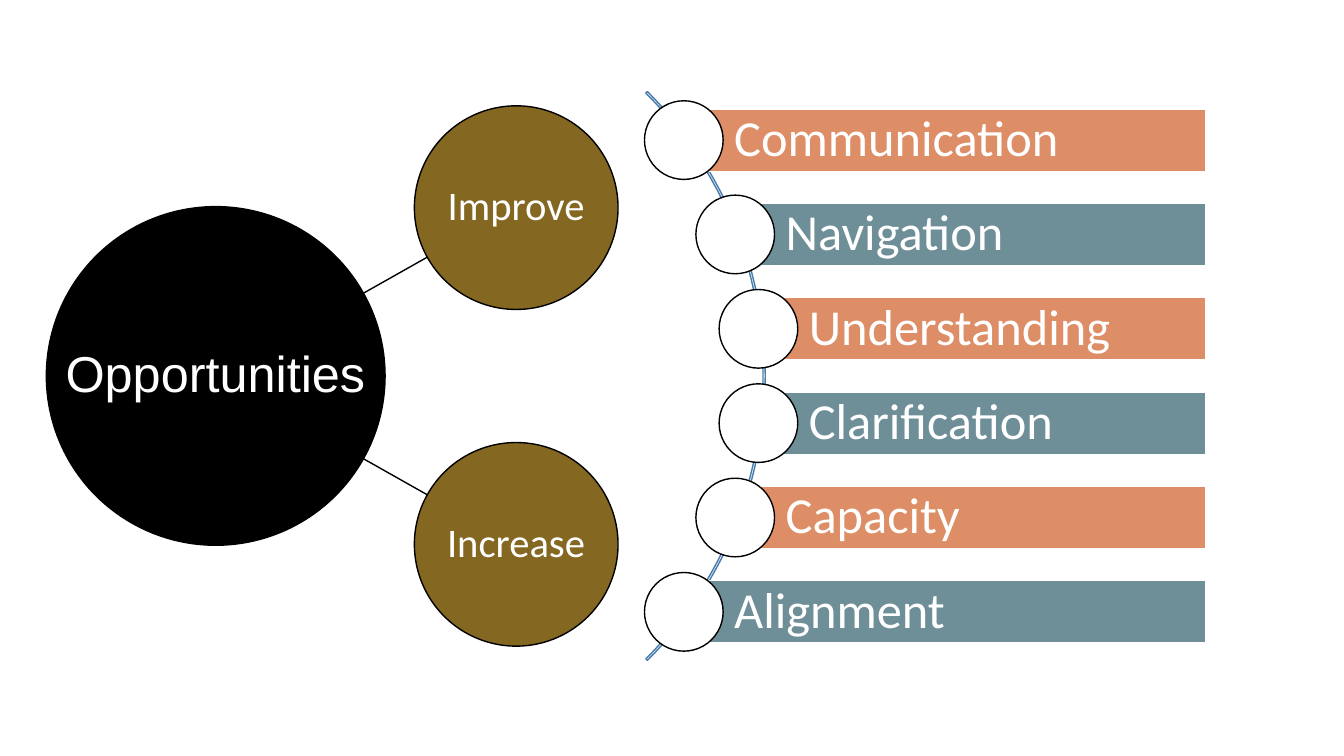
from math import sqrt

from lxml.etree import SubElement
from pptx import Presentation
from pptx.dml.color import RGBColor
from pptx.enum.shapes import MSO_CONNECTOR, MSO_SHAPE
from pptx.enum.text import MSO_ANCHOR, MSO_AUTO_SIZE, PP_ALIGN
from pptx.oxml.ns import qn
from pptx.util import Inches, Pt

BLACK, WHITE = "000000", "FFFFFF"
GOLD, CORAL, TEAL, BLUE = "846721", "DE8E67", "6E8E98", "497CAB"

GOALS = ["Communication", "Navigation", "Understanding",
         "Clarification", "Capacity", "Alignment"]
MID = 3.73        # height of the centre line
ARC_X = 3.6       # centre of the arc
PITCH = 0.936     # distance between goal rows


def color(code):
    return RGBColor.from_string(code)


def write(shape, text, size, font="Calibri", align=PP_ALIGN.LEFT,
          left=0.1, pad=0.1, tint=WHITE):
    frame = shape.text_frame
    frame.word_wrap = True
    frame.auto_size = MSO_AUTO_SIZE.NONE
    frame.vertical_anchor = MSO_ANCHOR.MIDDLE
    frame.margin_left = Inches(left)
    frame.margin_top = frame.margin_right = frame.margin_bottom = Inches(pad)
    para = frame.paragraphs[0]
    para.alignment = align
    para.line_spacing = 0.9
    para.space_before = Pt(0)
    run = para.add_run()
    run.text = text
    run.font.size = Pt(size)
    run.font.name = font
    run.font.color.rgb = color(tint)


def draw(slide, kind, x, y, w, h, fill, line):
    shape = slide.shapes.add_shape(kind, Inches(x), Inches(y),
                                   Inches(w), Inches(h))
    shape.shadow.inherit = False
    if fill:
        shape.fill.solid()
        shape.fill.fore_color.rgb = color(fill)
    else:
        shape.fill.background()
    shape.line.color.rgb = color(line)
    shape.line.width = Pt(1)
    return shape


def disc(slide, x, y, size, fill):
    """Circle centred on x, y."""
    return draw(slide, MSO_SHAPE.OVAL, x - size / 2, y - size / 2,
                size, size, fill, BLACK)


def spoke(slide, x1, y1, x2, y2):
    line = slide.shapes.add_connector(
        MSO_CONNECTOR.STRAIGHT, Inches(x1), Inches(y1), Inches(x2), Inches(y2))
    line.line.color.rgb = color(BLACK)
    line.line.width = Pt(1)
    SubElement(line._element.spPr, qn("a:effectLst"))


def hub(slide, body):
    # Spokes lie behind the circles
    for side in (-1, 1):
        spoke(slide, 3.32, MID + side * 0.66, 4.24, MID + side * 1.18)
    disc(slide, 2.14, MID, 3.36, BLACK)
    for side, word in ((-1, "Improve"), (1, "Increase")):
        ball = disc(slide, 5.12, MID + side * 1.67, 2.02, GOLD)
        write(ball, word, 29, align=PP_ALIGN.CENTER, left=0.02, pad=0.02)

    # Bring the main label in front of its circle
    body.left, body.top = Inches(0.55), Inches(3.31)
    body.width, body.height = Inches(3.21), Inches(0.85)
    write(body, "Opportunities", 36, font="Arial", pad=0.05)
    body._element.getparent().append(body._element)


def goals(slide):
    # Thin arc that carries the rings
    size = 7.98
    arc = draw(slide, MSO_SHAPE.BLOCK_ARC, ARC_X - size / 2, MID - size / 2,
               size, size, None, BLUE)
    for i, value in enumerate((189, 27, 0.0027)):
        arc.adjustments[i] = value

    # Each bar starts at the centre of its ring
    for i, goal in enumerate(GOALS):
        drop = (i - (len(GOALS) - 1) / 2) * PITCH
        x, y = ARC_X + sqrt(3.95 ** 2 - drop ** 2), MID + drop
        bar = draw(slide, MSO_SHAPE.RECTANGLE, x, y - 0.31, 11.96 - x, 0.62,
                   (CORAL, TEAL)[i % 2], WHITE)
        write(bar, goal, 36, left=0.5)
        disc(slide, x, y, 0.78, WHITE)


def main():
    deck = Presentation()
    deck.slide_width, deck.slide_height = Inches(13.33), Inches(7.5)
    slide = deck.slides.add_slide(deck.slide_layouts[2])
    title = slide.shapes.title._element
    title.getparent().remove(title)
    hub(slide, slide.placeholders[1])
    goals(slide)
    deck.save("out.pptx")


if __name__ == "__main__":
    main()
